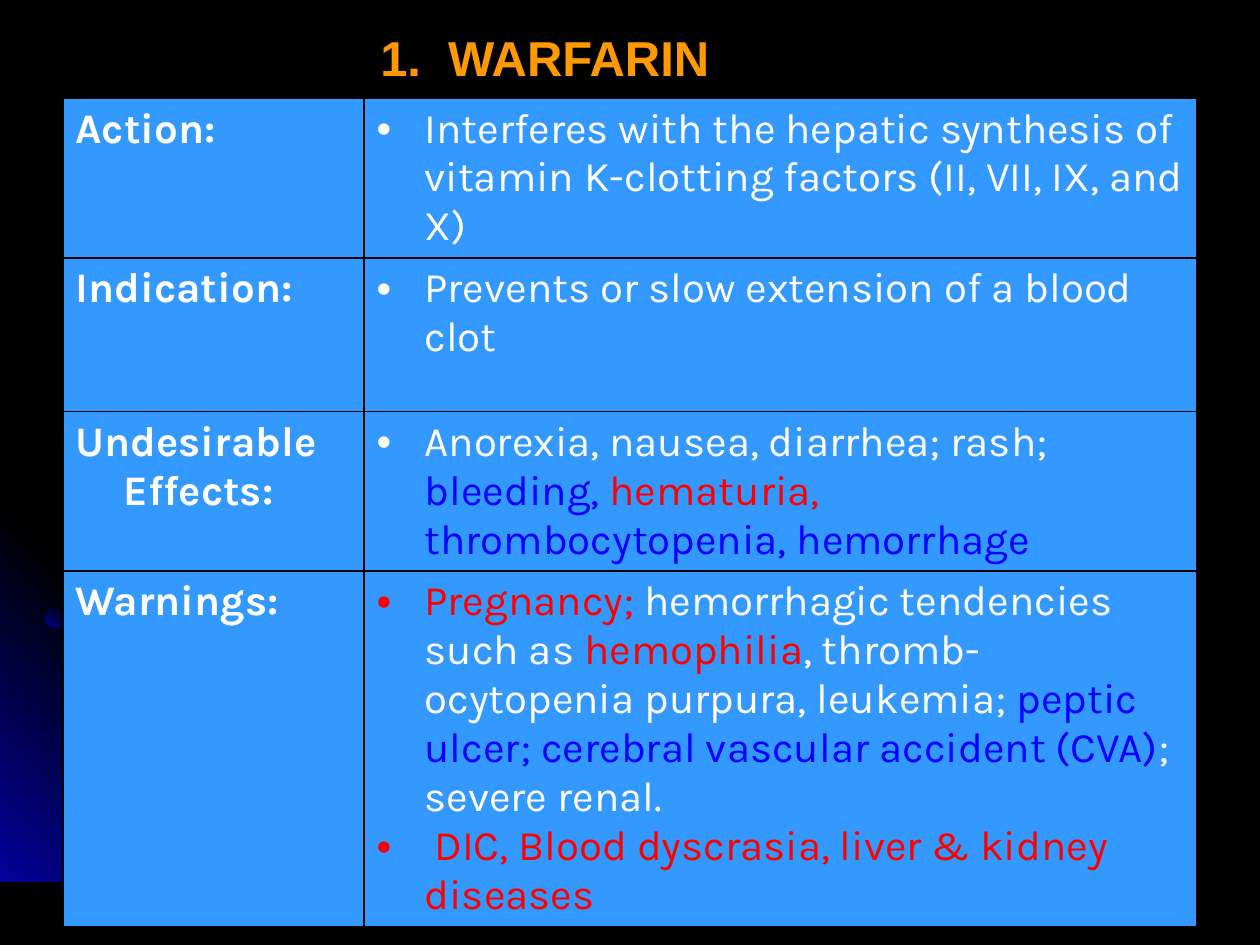
"""Build a slide that summarises warfarin in a two-column table."""
from copy import deepcopy

from lxml.etree import SubElement
from pptx import Presentation
from pptx.dml.color import RGBColor
from pptx.enum.shapes import MSO_SHAPE
from pptx.enum.text import MSO_ANCHOR, MSO_AUTO_SIZE
from pptx.oxml import parse_xml
from pptx.oxml.ns import nsdecls, qn
from pptx.util import Emu, Inches, Pt

COLORS = {"black": "000000", "navy": "010199", "cell": "3399FF", "title": "FF9900",
          "white": "FFFFFF", "blue": "0000FF", "red": "FF0000"}
TITLE = "1.  WARFARIN"
ROWS = [
    ("Action:", 1.19, [[("Interferes with the hepatic synthesis of vitamin K-clotting "
                         "factors (II, VII, IX, and X)", "white")]]),
    ("Indication:", 1.22, [[("Prevents or slow extension of a blood clot", "white")]]),
    ("Undesirable Effects:", 1.22, [[
        ("Anorexia, nausea, diarrhea; rash; ", "white"), ("bleeding, ", "blue"),
        ("hematuria,", "red"), (" thrombocytopenia, hemorrhage", "blue")]]),
    ("Warnings:", 2.74, [
        [("Pregnancy;", "red"), (" hemorrhagic tendencies such as ", "white"),
         ("hemophilia", "red"), (", thromb-ocytopenia purpura, leukemia; ", "white"),
         ("peptic ulcer; cerebral vascular accident (CVA)", "blue"),
         ("; severe renal.", "white")],
        [(" DIC, Blood dyscrasia, liver & kidney diseases", "red")]]),
]
COLUMNS = (2.39, 6.61)
TABLE_LEFT, TABLE_TOP = 0.5, 0.78
TRIANGLE = [(3.22, 7.49), (0, 7.49), (0, 4.27)]
ARCS = [
    [(0, 4.38), (0.56, 4.49), (0.97, 4.61), (1.35, 4.78), (1.73, 4.99), (2.08, 5.23),
     (2.41, 5.49), (2.71, 5.79), (2.98, 6.12), (3.23, 6.49), (3.5, 6.98), (3.7, 7.49)],
    [(0, 4.77), (0.39, 4.9), (0.77, 5.07), (1.15, 5.28), (1.5, 5.51), (1.83, 5.78),
     (2.13, 6.08), (2.4, 6.41), (2.65, 6.77), (2.85, 7.14), (3.01, 7.49)],
    [(0, 4.44), (0.36, 4.57), (0.74, 4.75), (1.09, 4.94), (1.42, 5.18), (1.73, 5.44),
     (2.02, 5.75), (2.27, 6.05), (2.52, 6.41), (2.8, 6.94), (3.01, 7.49)],
]
DOTS = [(0.36, 4.83, 0.15, 45), (2.67, 6.74, 0.16, 315), (1.37, 4.73, 0.21, 45)]
HANG = 0.38


def color(name):
    return RGBColor.from_string(COLORS[name])


def paint_gradient(shape, names, angle):
    shape.shadow.inherit = False
    shape.line.fill.background()
    fill = shape.fill
    fill.gradient()
    fill.gradient_angle = angle
    stop_list = shape._element.spPr.find(".//" + qn("a:gsLst"))
    while len(stop_list) < len(names):
        stop_list.append(deepcopy(stop_list[0]))
    for index, (stop, name) in enumerate(zip(fill.gradient_stops, names)):
        stop.position = index / (len(names) - 1)
        stop.color.rgb = color(name)


def add_outline(slide, points, names, angle):
    builder = slide.shapes.build_freeform(*points[0], scale=Inches(1))
    builder.add_line_segments(points[1:], close=True)
    paint_gradient(builder.convert_to_shape(), names, angle)


def ribbon(edge, thickness=0.02):
    last = len(edge) - 1
    other = [(x + thickness * i / last, y - thickness * (1 - i / last))
             for i, (x, y) in enumerate(edge)]
    return edge + other[::-1]


def add_text(paragraph, text, *, font="Karla", size=24, fill="white", bold=False):
    run = paragraph.add_run()
    run.text = text
    run.font.name, run.font.size, run.font.bold = font, Pt(size), bold
    run.font.color.rgb = color(fill)


def hang_paragraph(paragraph, bullet=None):
    properties = paragraph._p.get_or_add_pPr()
    properties.set("marL", str(Inches(HANG)))
    properties.set("indent", str(-Inches(HANG)))
    if bullet:
        SubElement(properties, qn("a:buFont")).set("typeface", "Arial")
        SubElement(properties, qn("a:buChar")).set("char", bullet)


def style_cell(cell):
    cell.fill.solid()
    cell.fill.fore_color.rgb = color("cell")
    properties = cell._tc.get_or_add_tcPr()
    for index, side in enumerate(("lnL", "lnR", "lnT", "lnB")):
        properties.insert(index, parse_xml(
            f'<a:{side} {nsdecls("a")} w="{Pt(1)}"><a:solidFill>'
            f'<a:srgbClr val="{COLORS["black"]}"/></a:solidFill></a:{side}>'))


def add_backdrop(slide):
    slide.background.fill.solid()
    slide.background.fill.fore_color.rgb = color("black")
    add_outline(slide, TRIANGLE, ("navy", "black", "navy"), 45)
    for edge in ARCS:
        add_outline(slide, ribbon(edge), ("black", "navy", "black"), 315)
    for left, top, size, angle in DOTS:
        dot = slide.shapes.add_shape(MSO_SHAPE.OVAL, Inches(left), Inches(top),
                                     Inches(size), Inches(size))
        paint_gradient(dot, ("navy", "black"), angle)


def add_drug_table(slide):
    height = sum(row[1] for row in ROWS)
    table = slide.shapes.add_table(
        len(ROWS), len(COLUMNS), Inches(TABLE_LEFT), Inches(TABLE_TOP),
        Inches(sum(COLUMNS)), Inches(height)).table
    table.first_row = table.horz_banding = False
    for column, width in zip(table.columns, COLUMNS):
        column.width = Inches(width)
    for row, (label, row_height, bullets) in zip(table.rows, ROWS):
        row.height = Inches(row_height)
        label_cell, detail_cell = row.cells
        style_cell(label_cell)
        style_cell(detail_cell)
        paragraph = label_cell.text_frame.paragraphs[0]
        hang_paragraph(paragraph)
        add_text(paragraph, label, bold=True)
        frame = detail_cell.text_frame
        for index, runs in enumerate(bullets):
            paragraph = frame.add_paragraph() if index else frame.paragraphs[0]
            hang_paragraph(paragraph, "•")
            for text, name in runs:
                add_text(paragraph, text, fill=name)


def add_title(slide):
    box = slide.shapes.add_textbox(Inches(2.92), Inches(0.17), Inches(2.86), Inches(0.57))
    frame = box.text_frame
    frame.word_wrap = False
    frame.auto_size = MSO_AUTO_SIZE.SHAPE_TO_FIT_TEXT
    frame.vertical_anchor = MSO_ANCHOR.MIDDLE
    add_text(frame.paragraphs[0], TITLE, font="Arial", size=28, fill="title", bold=True)


def main():
    presentation = Presentation()
    presentation.slide_width, presentation.slide_height = Inches(10), Inches(7.5)
    slide = presentation.slides.add_slide(presentation.slide_layouts[6])
    add_backdrop(slide)
    add_drug_table(slide)
    add_title(slide)
    presentation.save("out.pptx")


if __name__ == "__main__":
    main()
